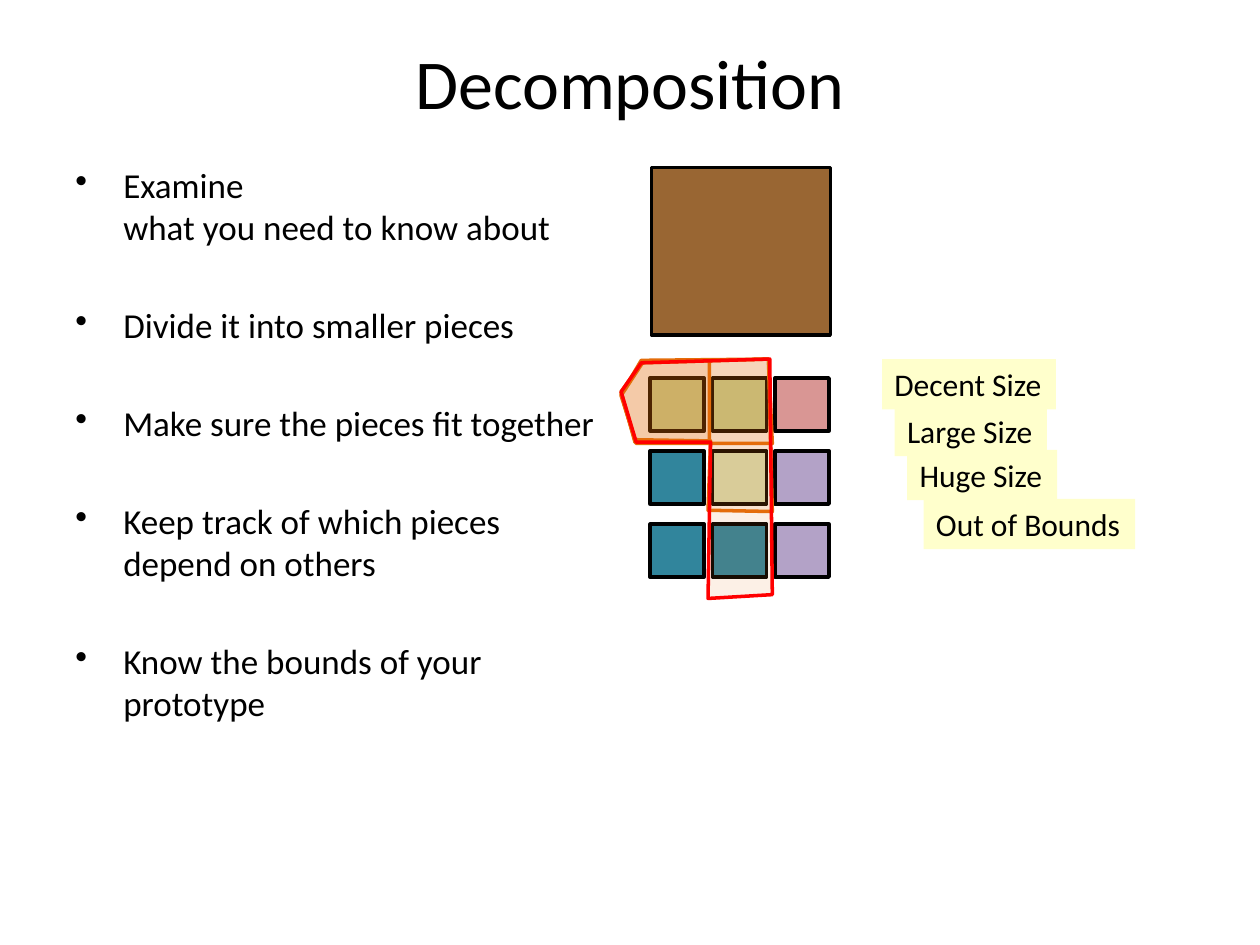
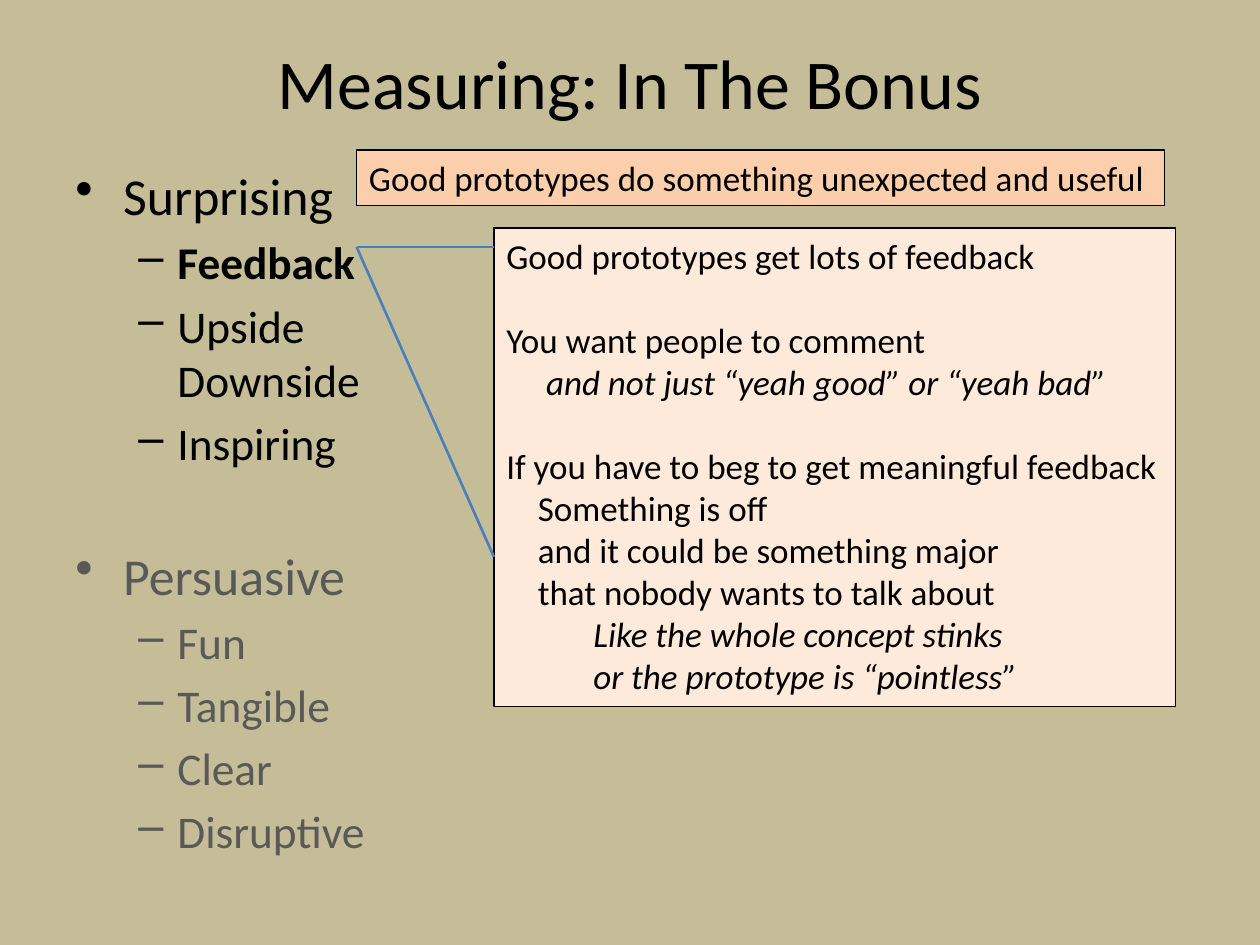
from lxml.etree import SubElement
from pptx import Presentation
from pptx.dml.color import RGBColor
from pptx.enum.shapes import MSO_CONNECTOR as CONN, MSO_SHAPE as SHAPE
from pptx.enum.text import MSO_ANCHOR as ANCHOR, PP_ALIGN as ALIGN
from pptx.oxml.ns import qn
from pptx.util import Inches, Pt

FONT = "Calibri"
COLORS = {
    "white": "FFFFFF", "black": "000000", "grey": "595959", "khaki": "C4BD97",
    "brown": "996633", "green": "C3D69B", "pale green": "D7E4BD",
    "rose": "D99694", "teal": "31859C", "violet": "B3A2C7",
    "orange": "E46C0A", "red": "FF0000", "yellow": "FFFFCC",
    "cream": "FDEADA", "peach": "FBCFAB", "blue": "4B7EBC",
}
GRID_COLS = 20  # square cells, so 15 rows

# Bullet levels: character, left margin and hanging indent in cells
LEVELS = [("•", 0.76, 0.76), ("–", 1.62, 0.62)]


def rgb(name):
    return RGBColor.from_string(COLORS[name])


def write(p, text, size=20, color="black", bold=False, italic=False,
          align=ALIGN.LEFT, before=0):
    """Put text into a paragraph and format it."""
    p.text = text
    p.alignment = align
    p.space_before = Pt(before)
    for r in p.runs:
        f = r.font
        f.name, f.size, f.bold, f.italic = FONT, Pt(size), bold, italic
        f.color.rgb = rgb(color)


class Deck:
    def __init__(self):
        self.prs = Presentation()
        self.prs.slide_width, self.prs.slide_height = Inches(10), Inches(7.5)
        self.cell = self.prs.slide_width / GRID_COLS
        self.s = None

    def emu(self, *cells):
        return [round(c * self.cell) for c in cells]

    def slide(self, title, background):
        self.s = self.prs.slides.add_slide(self.prs.slide_layouts[5])
        fill = self.s.background.fill
        fill.solid()
        fill.fore_color.rgb = rgb(background)
        sp = self.s.shapes.title
        sp.left, sp.top, sp.width, sp.height = self.emu(1, 0.6, 18, 1.4)
        sp.text_frame.vertical_anchor = ANCHOR.MIDDLE
        write(sp.text_frame.paragraphs[0], title, size=40, align=ALIGN.CENTER)

    def style(self, sp, fill, line=None, weight=2, alpha=None):
        sp.shadow.inherit = False
        sp.fill.solid()
        sp.fill.fore_color.rgb = rgb(fill)
        if alpha:
            color = sp.fill._xPr.find(".//" + qn("a:srgbClr"))
            SubElement(color, qn("a:alpha"), val=str(alpha * 1000))
        if line:
            sp.line.color.rgb = rgb(line)
            sp.line.width = Pt(weight)
        else:
            sp.line.fill.background()

    def paragraphs(self, tf, items):
        """Fill a frame with (text, format) pairs; level and indent are in cells."""
        tf.word_wrap = True
        tf.vertical_anchor = ANCHOR.TOP
        for i, (text, fmt) in enumerate(items):
            p = tf.paragraphs[0] if i == 0 else tf.add_paragraph()
            fmt = dict(fmt)
            level, margin = fmt.pop("level", None), fmt.pop("indent", 0)
            write(p, text, **fmt)
            pPr = p._p.get_or_add_pPr()
            if level is not None:
                char, margin, hang = LEVELS[level]
                p.level = level
                pPr.set("indent", str(-self.emu(hang)[0]))
                SubElement(pPr, qn("a:buChar"), char=char)
            pPr.set("marL", str(self.emu(margin)[0]))

    def body(self, width, items):
        sp = self.s.shapes.add_textbox(*self.emu(1, 2.5, width, 10.9))
        self.paragraphs(sp.text_frame, items)

    def box(self, x, y, w, h, fill, line=None, weight=2, items=()):
        sp = self.s.shapes.add_shape(SHAPE.RECTANGLE, *self.emu(x, y, w, h))
        self.style(sp, fill, line, weight)
        if items:
            sp.text_frame.margin_right = 0
            self.paragraphs(sp.text_frame, items)

    def outline(self, points, line):
        pts = [self.emu(*pt) for pt in points]
        fb = self.s.shapes.build_freeform(*pts[0], scale=1)
        fb.add_line_segments(pts[1:], close=True)
        self.style(fb.convert_to_shape(), "orange", line, alpha=10)

    def line(self, start, end):
        c = self.s.shapes.add_connector(CONN.STRAIGHT, *self.emu(*start, *end))
        c.line.color.rgb = rgb("blue")
        c.line.width = Pt(1.5)
        SubElement(c._element.spPr, qn("a:effectLst"))


def decomposition(d):
    d.slide("Decomposition", "white")
    steps = ["Examine \nwhat you need to know about",
             "Divide it into smaller pieces",
             "Make sure the pieces fit together",
             "Keep track of which pieces depend on others",
             "Know the bounds of your prototype"]
    d.body(8.84, [(t, dict(level=0, before=32 if i else 0))
                  for i, t in enumerate(steps)])

    # The whole, then its pieces
    d.box(10.34, 2.66, 2.84, 2.66, "brown", "black")
    pieces = [("green", "green", "rose"),
              ("teal", "pale green", "violet"),
              ("teal", "teal", "violet")]
    for row, fills in enumerate(pieces):
        for col, fill in enumerate(fills):
            d.box(10.32 + 0.99 * col, 6 + 1.16 * row, 0.86, 0.84, fill, "black")

    # Scopes, each taking in more pieces
    scopes = [
        ("orange", [(9.86, 6.22), (10.08, 7.02), (11.26, 7.02), (11.26, 5.72),
                    (10.2, 5.74)]),
        ("orange", [(9.86, 6.28), (10.1, 7.04), (12.26, 7.04), (12.2, 5.7),
                    (10.2, 5.76)]),
        ("orange", [(10.18, 5.72), (9.86, 6.26), (10.08, 6.98), (11.28, 7),
                    (11.24, 8.1), (12.26, 8.12), (12.2, 5.7)]),
        ("red", [(9.86, 6.22), (10.1, 7.02), (11.28, 7.02), (11.24, 9.5),
                 (12.26, 9.44), (12.22, 5.7), (10.18, 5.76)]),
    ]
    for line, points in scopes:
        d.outline(points, line)

    # Scope labels
    labels = [("Decent Size", 14, 5.7, 2.76), ("Large Size", 14.2, 6.44, 2.42),
              ("Huge Size", 14.4, 7.14, 2.38), ("Out of Bounds", 14.66, 7.92, 3.36)]
    for text, x, y, w in labels:
        d.box(x, y, w, 0.8, "yellow", items=[(text, dict(size=18))])


def measuring(d):
    d.slide("Measuring: In The Bonus", "khaki")
    head = dict(level=0, size=29.6)
    sub = dict(level=1, size=25.9, before=5)
    grey = dict(color="grey")
    qualities = [("Surprising", head), ("Feedback", sub | dict(bold=True)),
                 ("Upside\nDownside", sub), ("Inspiring", sub),
                 ("Persuasive", head | grey | dict(before=42))]
    qualities += [(t, sub | grey)
                  for t in ("Fun", "Tangible", "Clear", "Disruptive")]
    d.body(18, qualities)

    # Callout on feedback
    gap, inner = dict(before=24), dict(indent=0.5)
    deep = dict(indent=1.38, italic=True)
    d.box(7.84, 3.62, 10.82, 7.6, "cream", "black", 0.75, [
        ("Good prototypes get lots of feedback", {}),
        ("You want people to comment", gap),
        ("and not just “yeah good” or “yeah bad”", dict(indent=0.63, italic=True)),
        ("If you have to beg to get meaningful feedback", gap),
        ("Something is off", inner),
        ("and it could be something major", inner),
        ("that nobody wants to talk about", inner),
        ("Like the whole concept stinks", deep),
        ("or the prototype is “pointless”", deep)])
    for end_y in (3.92, 8.84):
        d.line((5.66, 3.92), (7.84, end_y))

    # Banner on surprise
    d.box(5.66, 2.38, 12.82, 0.88, "peach", "black", 0.75,
          [("Good prototypes do something unexpected and useful", {})])


def main():
    d = Deck()
    decomposition(d)
    measuring(d)
    d.prs.save("out.pptx")


if __name__ == "__main__":
    main()
